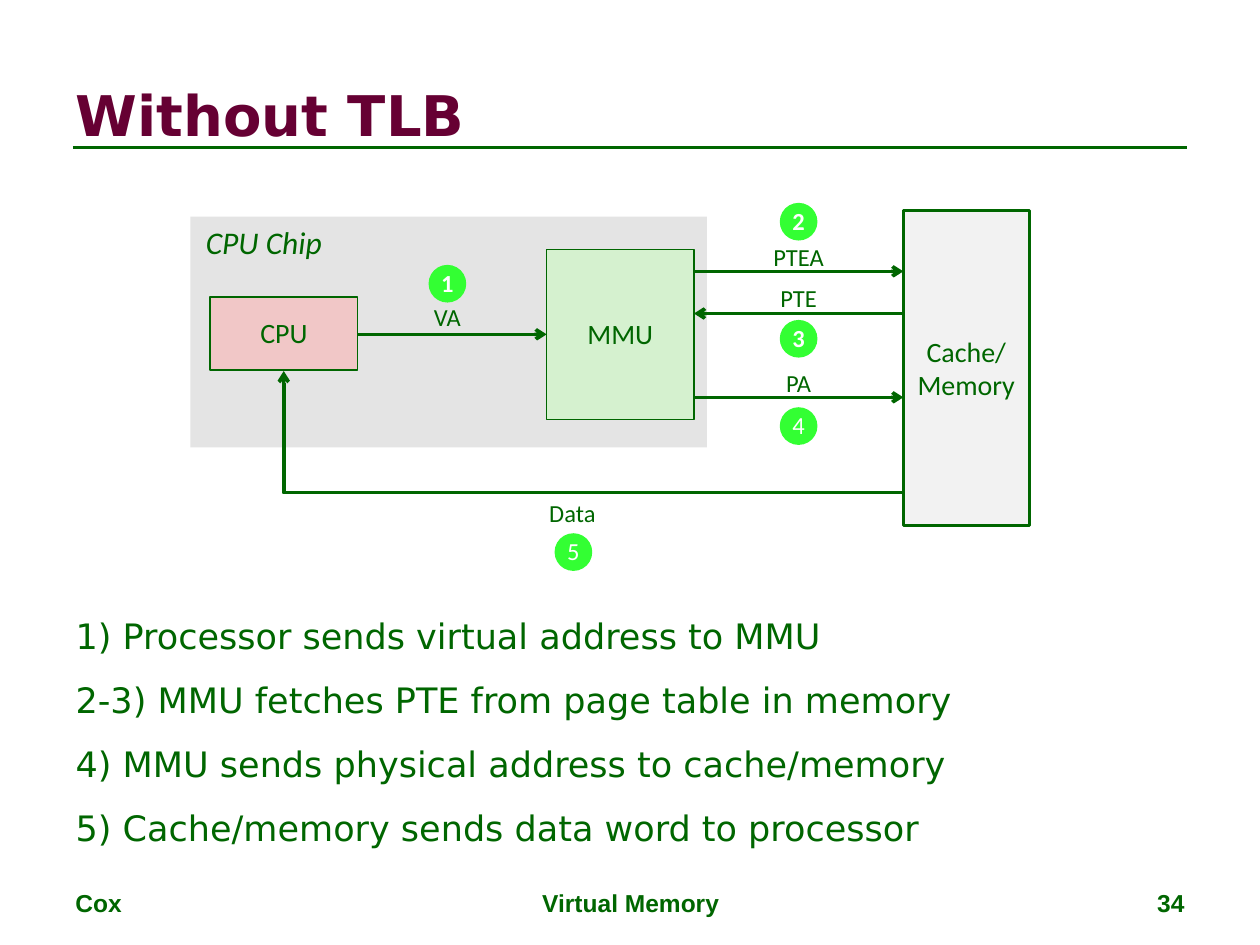
from dataclasses import dataclass

from lxml.etree import SubElement
from pptx import Presentation
from pptx.dml.color import RGBColor
from pptx.enum.shapes import MSO_CONNECTOR, MSO_SHAPE
from pptx.enum.text import MSO_ANCHOR, MSO_AUTO_SIZE, PP_ALIGN
from pptx.oxml.ns import qn
from pptx.util import Cm, Pt


@dataclass(frozen=True)
class Theme:
    green: str = "006600"
    maroon: str = "660033"
    badge: str = "33FF33"
    white: str = "FFFFFF"
    chip: str = "E4E4E4"
    cpu: str = "F1C7C7"
    mmu: str = "D5F1CF"
    memory: str = "F2F2F2"
    heading_font: str = "DejaVu Sans"
    diagram_font: str = "Calibri"
    footer_font: str = "Arial"
    title_size: int = 32
    list_size: int = 20
    chip_size: int = 18
    block_size: int = 16
    small_size: int = 14


THEME = Theme()
CENTER_X = 16.1
BADGE_SIZE = 0.76
LABEL_HEIGHT = 0.84
MMU_RIGHT, MEMORY_LEFT = 13.99, 18.21

STEPS = [
    "1) Processor sends virtual address to MMU",
    "2-3) MMU fetches PTE from page table in memory",
    "4) MMU sends physical address to cache/memory",
    "5) Cache/memory sends data word to processor",
]
LABELS = [
    ("VA", 9.02, 6.41, 1.07),
    ("PTEA", CENTER_X, 5.19, 1.55),
    ("PTE", CENTER_X, 6.03, 1.24),
    ("PA", CENTER_X, 7.73, 1.04),
    ("Data", 11.54, 10.36, 1.47),
]
BADGES = [
    ("1", 9.02, 5.72, True),
    ("2", CENTER_X, 4.47, True),
    ("3", CENTER_X, 6.83, True),
    ("4", CENTER_X, 8.59, False),
    ("5", 11.56, 11.13, False),
]
ARROWS = [
    (7.21, 11.02, 6.74),
    (MMU_RIGHT, MEMORY_LEFT, 5.47),
    (MEMORY_LEFT, MMU_RIGHT, 6.32),
    (MMU_RIGHT, MEMORY_LEFT, 8.01),
]
FOOTERS = [
    ("Cox", 1.27, 5.92, PP_ALIGN.LEFT),
    ("Virtual Memory", 8.69, 8.05, PP_ALIGN.CENTER),
    ("34", 18.21, 5.92, PP_ALIGN.RIGHT),
]


def write(shape, text, *, size, font=THEME.diagram_font, color=THEME.green,
          bold=False, italic=False, align=PP_ALIGN.CENTER,
          anchor=MSO_ANCHOR.MIDDLE, wrap=False, spacing=None, gap=0, indent=0):
    frame = shape.text_frame
    frame.auto_size = MSO_AUTO_SIZE.NONE
    frame.word_wrap = wrap
    frame.vertical_anchor = anchor
    frame.text = text
    for index, paragraph in enumerate(frame.paragraphs):
        properties = paragraph._p.get_or_add_pPr()
        properties.set("marL", str(Cm(indent)))
        properties.set("indent", str(-Cm(indent)))
        SubElement(properties, qn("a:buNone"))
        paragraph.alignment = align
        paragraph.line_spacing = spacing
        paragraph.space_before = Pt(gap if index else 0)
        paragraph.font.name = font
        paragraph.font.size = Pt(size)
        paragraph.font.bold = bold
        paragraph.font.italic = italic
        paragraph.font.color.rgb = RGBColor.from_string(color)


def place(shape, left, top, width, height):
    shape.left, shape.top = Cm(left), Cm(top)
    shape.width, shape.height = Cm(width), Cm(height)


def add_block(slide, bounds, fill, line_width=0, preset=MSO_SHAPE.RECTANGLE):
    block = slide.shapes.add_shape(preset, *map(Cm, bounds))
    block.shadow.inherit = False
    block.fill.solid()
    block.fill.fore_color.rgb = RGBColor.from_string(fill)
    if line_width:
        block.line.color.rgb = RGBColor.from_string(THEME.green)
        block.line.width = Pt(line_width)
    else:
        block.line.fill.background()
    return block


def add_text(slide, text, bounds, **style):
    write(slide.shapes.add_textbox(*map(Cm, bounds)), text, **style)


def add_badge(slide, number, x, y, bold):
    bounds = (x - BADGE_SIZE / 2, y - BADGE_SIZE / 2, BADGE_SIZE, BADGE_SIZE)
    badge = add_block(slide, bounds, THEME.badge, preset=MSO_SHAPE.OVAL)
    write(badge, number, size=THEME.small_size, color=THEME.white,
          bold=bold, spacing=0.98)


def add_line(slide, ends, width=2, arrow=True, kind=MSO_CONNECTOR.STRAIGHT):
    line = slide.shapes.add_connector(kind, *map(Cm, ends))
    line.line.color.rgb = RGBColor.from_string(THEME.green)
    line.line.width = Pt(width)
    if arrow:
        SubElement(line.line._get_or_add_ln(), qn("a:tailEnd"), type="arrow")
    SubElement(line._element.spPr, qn("a:effectLst"))
    return line


def add_return_path(slide, ends):
    properties = add_line(slide, ends, kind=MSO_CONNECTOR.ELBOW)._element.spPr
    properties.find(qn("a:prstGeom")).set("prst", "bentConnector2")
    properties.find(qn("a:xfrm")).set("rot", str(180 * 60000))


def add_diagram(slide):
    mmu = add_block(slide, (11.02, 5.03, 2.97, 3.43), THEME.mmu, 1)
    write(mmu, "MMU", size=THEME.block_size, spacing=0.98)
    memory = add_block(slide, (MEMORY_LEFT, 4.24, 2.54, 6.35), THEME.memory, 1.5)
    write(memory, "Cache/\nMemory", size=THEME.block_size)
    cpu = add_block(slide, (4.24, 5.99, 2.97, 1.47), THEME.cpu, 1)
    write(cpu, "CPU", size=THEME.block_size, spacing=0.98)
    add_text(slide, "CPU Chip", (3.81, 4.37, 3.02, 1.02), size=THEME.chip_size,
             italic=True, anchor=MSO_ANCHOR.TOP)
    for text, x, y, width in LABELS:
        bounds = (x - width / 2, y - LABEL_HEIGHT / 2, width, LABEL_HEIGHT)
        add_text(slide, text, bounds, size=THEME.small_size, spacing=0.98)
    for start, end, y in ARROWS:
        add_line(slide, (start, y, end, y))
    add_return_path(slide, (5.72, 7.48, MEMORY_LEFT, 9.93))
    for badge in BADGES:
        add_badge(slide, *badge)


def main():
    deck = Presentation()
    deck.slide_width, deck.slide_height = Cm(25.4), Cm(19.05)
    slide = deck.slides.add_slide(deck.slide_layouts[1])
    title, steps = slide.placeholders

    add_line(slide, (1.47, 2.97, 23.93, 2.97), width=1.5, arrow=False)
    add_block(slide, (3.84, 4.37, 10.41, 4.65), THEME.chip)
    place(title, 1.27, 1.22, 24.21, 2.18)
    write(title, "Without TLB", size=THEME.title_size, font=THEME.heading_font,
          color=THEME.maroon, bold=True, align=PP_ALIGN.LEFT, wrap=True)
    place(steps, 1.27, 12.27, 18.85, 5.72)
    write(steps, "\n".join(STEPS), size=THEME.list_size, font=THEME.heading_font,
          align=PP_ALIGN.LEFT, anchor=MSO_ANCHOR.TOP, wrap=True,
          gap=12.5, indent=0.48)
    add_diagram(slide)
    for text, left, width, align in FOOTERS:
        add_text(slide, text, (left, 17.78, width, 0.89), size=THEME.small_size,
                 font=THEME.footer_font, bold=True, align=align,
                 anchor=MSO_ANCHOR.TOP, wrap=True)
    deck.save("out.pptx")


if __name__ == "__main__":
    main()
